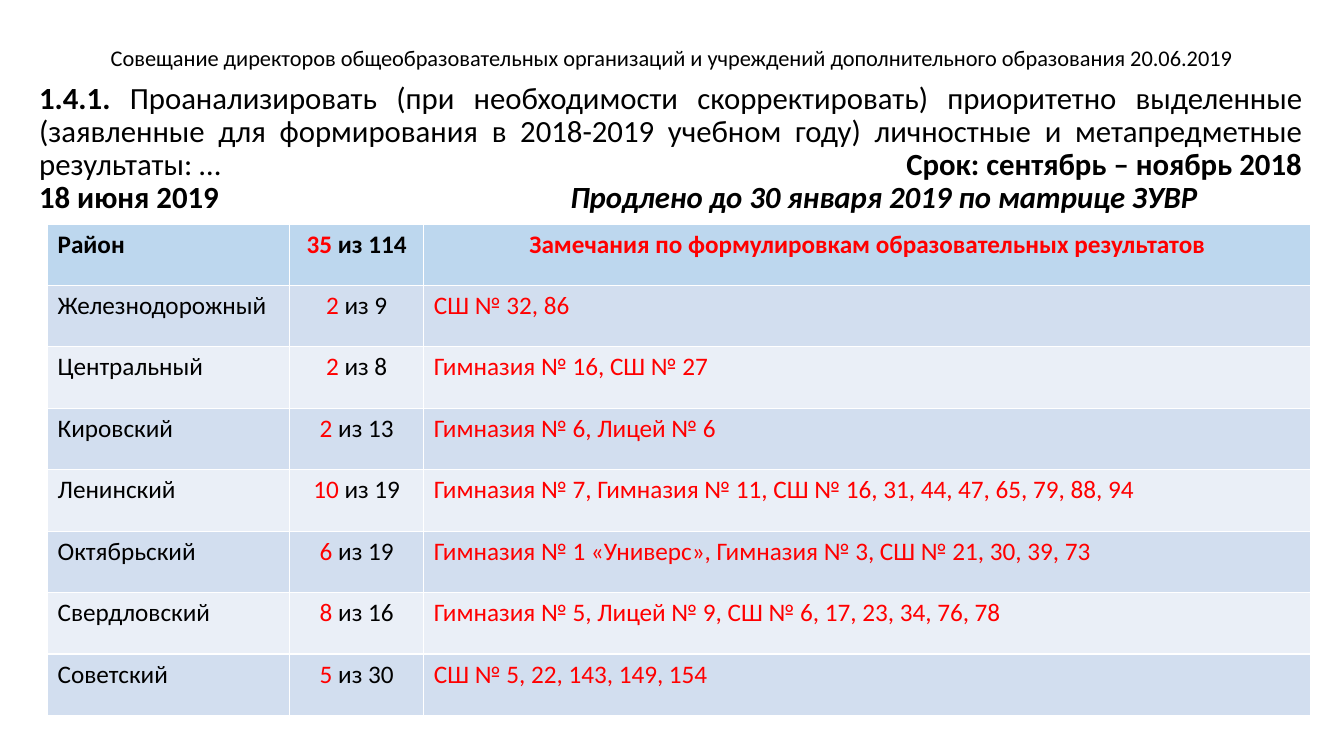
from pptx import Presentation
from pptx.dml.color import RGBColor
from pptx.enum.text import MSO_ANCHOR, MSO_AUTO_SIZE, PP_ALIGN
from pptx.oxml import parse_xml
from pptx.oxml.ns import nsdecls
from pptx.util import Pt

BLACK = RGBColor(0, 0, 0)
RED = RGBColor(0xFF, 0, 0)
HEADER_BLUE = RGBColor(0xBD, 0xD7, 0xEE)
BANDS = (RGBColor(0xD2, 0xDE, 0xEF), RGBColor(0xEA, 0xEF, 0xF7))
FONT = "Calibri"

TITLE = ("Совещание директоров общеобразовательных организаций "
         "и учреждений дополнительного образования 20.06.2019")
TASK = ("Проанализировать (при необходимости скорректировать) приоритетно "
        "выделенные (заявленные для формирования в 2018-2019 учебном году) "
        "личностные и метапредметные результаты: …\t")
HEADER = ("Район", 35, 114, "Замечания по формулировкам образовательных результатов")
DISTRICTS = (
    ("Железнодорожный", 2, 9, "СШ № 32, 86"),
    ("Центральный", 2, 8, "Гимназия № 16, СШ № 27"),
    ("Кировский", 2, 13, "Гимназия № 6, Лицей № 6"),
    ("Ленинский", 10, 19,
     "Гимназия № 7, Гимназия № 11, СШ № 16, 31, 44, 47, 65, 79, 88, 94"),
    ("Октябрьский", 6, 19,
     "Гимназия № 1 «Универс», Гимназия № 3, СШ № 21, 30, 39, 73"),
    ("Свердловский", 8, 16, "Гимназия № 5, Лицей № 9, СШ № 6, 17, 23, 34, 76, 78"),
    ("Советский", 5, 30, "СШ № 5, 22, 143, 149, 154"),
)
COLUMN_WIDTHS = (172.8, 96, 633.6)


def style_para(para, size, align=PP_ALIGN.LEFT, bold=False):
    """Set the font and alignment shared by a whole paragraph."""
    para.alignment = align
    para.font.name = FONT
    para.font.size = Pt(size)
    para.font.bold = bold


def add_span(para, text, color=BLACK, bold=None, italic=None):
    """Append a coloured run to a paragraph."""
    span = para.add_run()
    span.text = text
    span.font.color.rgb = color
    span.font.bold = bold
    span.font.italic = italic


def add_tab_stop(para, position, align):
    """Give a paragraph one tab stop, measured in points."""
    para._p.get_or_add_pPr().insert_element_before(parse_xml(
        f'<a:tabLst {nsdecls("a")}><a:tab pos="{Pt(position)}" algn="{align}"/></a:tabLst>'),
        "a:defRPr", "a:extLst")


def add_title(page, left, top, width, height):
    """Place the meeting name in the title placeholder."""
    title = page.shapes.title
    title.left, title.top, title.width, title.height = map(Pt, (left, top, width, height))
    frame = title.text_frame
    frame.word_wrap = True
    frame.auto_size = MSO_AUTO_SIZE.NONE
    frame.vertical_anchor = MSO_ANCHOR.MIDDLE
    para = frame.paragraphs[0]
    style_para(para, 16, PP_ALIGN.CENTER)
    para.line_spacing = 0.9
    add_span(para, TITLE)


def add_task(page, left, top, width, height):
    """Write the task with its deadline and extension."""
    box = page.shapes.add_textbox(*map(Pt, (left, top, width, height)))
    frame = box.text_frame
    frame.word_wrap = True
    task, extension = frame.paragraphs[0], frame.add_paragraph()
    style_para(task, 22, PP_ALIGN.JUSTIFY)
    style_para(extension, 22, bold=True)
    for para in (task, extension):
        para.line_spacing = 0.9
    add_tab_stop(task, width - 14.6, "r")
    add_tab_stop(extension, 379.5, "l")
    add_span(task, "1.4.1. ", bold=True)
    add_span(task, TASK)
    add_span(task, "Срок: сентябрь – ноябрь 2018", bold=True)
    add_span(extension, "18 июня 2019\t")
    add_span(extension, "Продлено до 30 января 2019 по матрице ЗУВР", italic=True)


def add_district_table(page, left, top, width, height):
    """Build the table of remarks by district."""
    rows = (HEADER, *DISTRICTS)
    table = page.shapes.add_table(
        len(rows), len(COLUMN_WIDTHS), *map(Pt, (left, top, width, height))).table
    for column, column_width in zip(table.columns, COLUMN_WIDTHS):
        column.width = Pt(column_width)
    for index, (district, found, total, remarks) in enumerate(rows):
        is_header = index == 0
        remark_align = PP_ALIGN.CENTER if is_header else PP_ALIGN.LEFT
        contents = (
            (PP_ALIGN.LEFT, ((district, BLACK),)),
            (PP_ALIGN.CENTER, ((str(found), RED), (f" из {total}", BLACK))),
            (remark_align, ((remarks, RED),)),
        )
        for cell, (align, spans) in zip(table.rows[index].cells, contents):
            cell.fill.solid()
            cell.fill.fore_color.rgb = HEADER_BLUE if is_header else BANDS[(index - 1) % 2]
            para = cell.text_frame.paragraphs[0]
            style_para(para, 18, align, is_header)
            for text, color in spans:
                add_span(para, text, color, bold=is_header)


def main():
    """Create the one-page deck."""
    deck = Presentation()
    deck.slide_width, deck.slide_height = Pt(960), Pt(540)
    page = deck.slides.add_slide(deck.slide_layouts[5])
    add_title(page, 66, 28.8, 828, 26.6)
    add_task(page, 20.9, 55.4, 916.6, 455.8)
    add_district_table(page, 34, 160, sum(COLUMN_WIDTHS), 351.2)
    deck.save("out.pptx")


if __name__ == "__main__":
    main()
